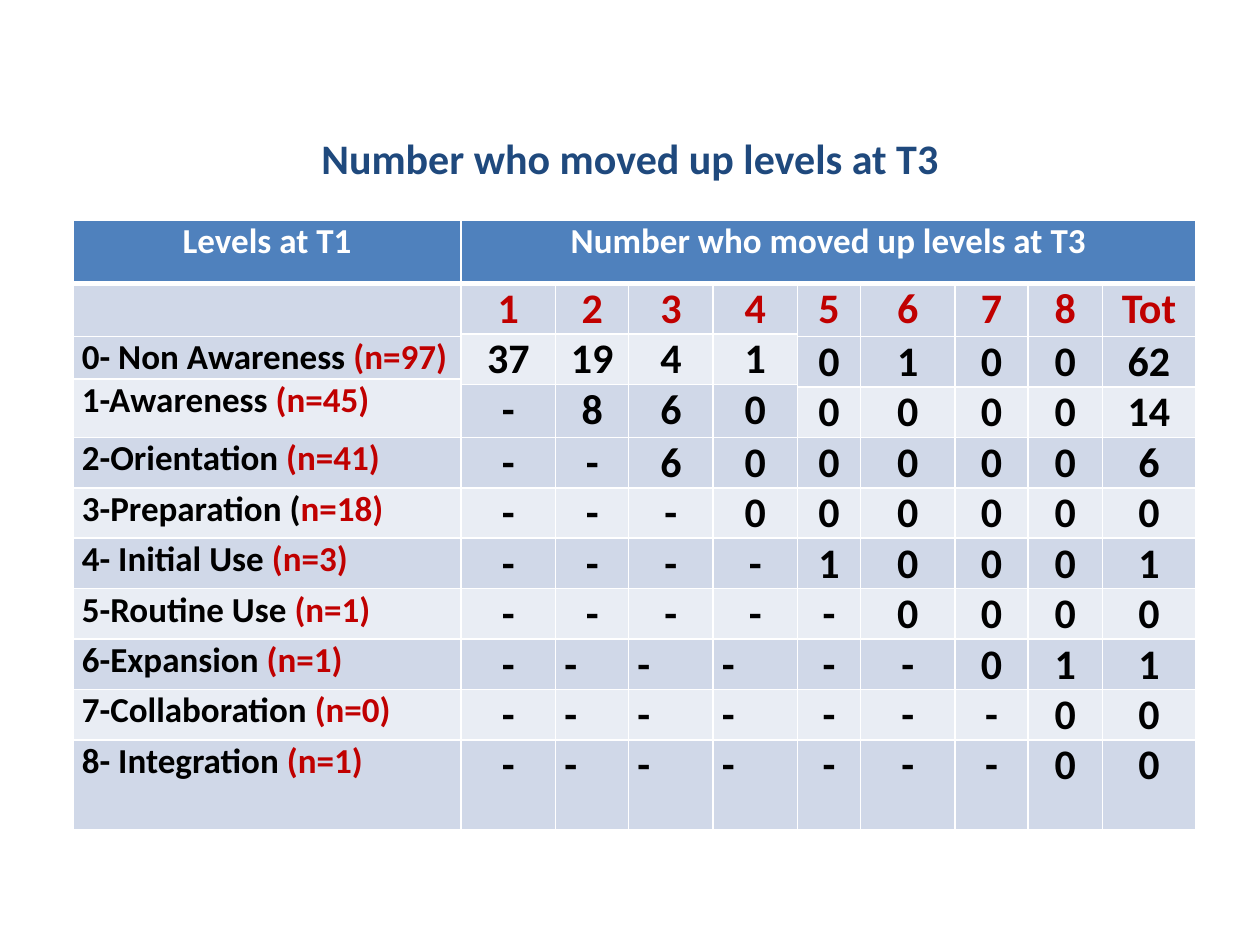
from dataclasses import dataclass
from typing import NamedTuple

from lxml.etree import SubElement
from pptx import Presentation
from pptx.dml.color import RGBColor
from pptx.enum.text import MSO_ANCHOR, MSO_AUTO_SIZE, PP_ALIGN
from pptx.oxml.ns import qn
from pptx.util import Inches, Pt


@dataclass(frozen=True)
class Theme:
    font: str = "Calibri"
    title: str = "1F497D"
    header: str = "4F81BD"
    bands: tuple[str, str] = ("E9EDF4", "D0D8E8")
    white: str = "FFFFFF"
    black: str = "000000"
    accent: str = "C00000"
    large: int = 24
    small: int = 20
    thin: int = 1
    thick: int = 3


class Span(NamedTuple):
    text: str
    color: str
    size: int


class Extent(NamedTuple):
    row: int
    rows: int = 1


class Placement(NamedTuple):
    label: Extent
    lower: Extent
    upper: Extent


class Level(NamedTuple):
    name: str
    sample: str
    counts: str
    left_columns: tuple[int, ...] = ()


THEME = Theme()
TITLE = "Number who moved up levels at T3"
COLUMN_WIDTHS = (3.08, 0.75, 0.58, 0.67, 0.67, 0.5, 0.75, 0.58, 0.59, 0.74)
ROW_HEIGHTS = (0.5, 0.4, 0.02, 0.34, 0.04, 0.02, *[0.4] * 7, 0.71)
FIRST_UPPER_COLUMN = 5
LEFT_ALIGNED = (2, 3, 4)
LEVELS = (
    Level("", "", "1 2 3 4 5 6 7 8 Tot"),
    Level("0- Non Awareness ", "(n=97)", "37 19 4 1 0 1 0 0 62"),
    Level("1-Awareness ", "(n=45)", "- 8 6 0 0 0 0 0 14"),
    Level("2-Orientation ", "(n=41)", "- - 6 0 0 0 0 0 6"),
    Level("3-Preparation (", "n=18)", "- - - 0 0 0 0 0 0"),
    Level("4- Initial Use ", "(n=3)", "- - - - 1 0 0 0 1"),
    Level("5-Routine Use ", "(n=1)", "- - - - - 0 0 0 0"),
    Level("6-Expansion ", "(n=1)", "- - - - - - 0 1 1", LEFT_ALIGNED),
    Level("7-Collaboration ", "(n=0)", "- - - - - - - 0 0", LEFT_ALIGNED),
    Level("8- Integration ", "(n=1)", "- - - - - - - 0 0", LEFT_ALIGNED),
)
STAGGERED = (
    Placement(Extent(1, 2), Extent(1), Extent(1, 2)),
    Placement(Extent(3), Extent(2, 3), Extent(3, 3)),
    Placement(Extent(4, 3), Extent(5, 2), Extent(6)),
)


def place_level(index: int) -> Placement:
    """Return the grid rows that a level's cells occupy."""
    if index < len(STAGGERED):
        return STAGGERED[index]
    return Placement(*[Extent(index + 4)] * 3)


def format_run(run, color: str, size: int) -> None:
    """Apply the shared bold face with a colour and size."""
    run.font.name = THEME.font
    run.font.bold = True
    run.font.size = Pt(size)
    run.font.color.rgb = RGBColor.from_string(color)


def draw_borders(cell, top: int, bottom: int) -> None:
    """Give a cell white borders with its own top and bottom weights."""
    properties = cell._tc.get_or_add_tcPr()
    weights = {"L": THEME.thin, "R": THEME.thin, "T": top, "B": bottom}
    for side, weight in weights.items():
        line = SubElement(properties, qn(f"a:ln{side}"), w=str(Pt(weight)))
        fill = SubElement(line, qn("a:solidFill"))
        SubElement(fill, qn("a:srgbClr"), val=THEME.white)


def draw_cell(table, extent: Extent, column: int, spans: list[Span],
              align: PP_ALIGN, columns: int = 1) -> None:
    """Merge, border, fill and write one table cell."""
    cell = table.cell(extent.row, column)
    if extent.rows > 1 or columns > 1:
        cell.merge(table.cell(extent.row + extent.rows - 1, column + columns - 1))
    is_header = extent.row == 0
    draw_borders(cell,
                 THEME.thick if extent.row == 1 else THEME.thin,
                 THEME.thick if is_header else THEME.thin)
    cell.fill.solid()
    color = THEME.header if is_header else THEME.bands[extent.row % 2]
    cell.fill.fore_color.rgb = RGBColor.from_string(color)
    cell.margin_left = cell.margin_right = Inches(0.07)
    cell.margin_top = cell.margin_bottom = 0
    para = cell.text_frame.paragraphs[0]
    para.alignment = align
    for span in spans:
        run = para.add_run()
        run.text = span.text
        format_run(run, span.color, span.size)


def draw_level(table, index: int, level: Level) -> None:
    """Draw the label and counts of one level."""
    place = place_level(index)
    label = [Span(level.name, THEME.black, THEME.small),
             Span(level.sample, THEME.accent, THEME.small)] if level.name else []
    draw_cell(table, place.label, 0, label, PP_ALIGN.LEFT)
    color = THEME.black if level.name else THEME.accent
    for column, count in enumerate(level.counts.split(), start=1):
        extent = place.lower if column < FIRST_UPPER_COLUMN else place.upper
        align = PP_ALIGN.LEFT if column in level.left_columns else PP_ALIGN.CENTER
        draw_cell(table, extent, column, [Span(count, color, THEME.large)], align)


def draw_title(page) -> None:
    """Place and format the slide title."""
    box = page.shapes.title
    box.left, box.top, box.width, box.height = map(Inches, (2.43, 1, 5.14, 0.5))
    frame = box.text_frame
    frame.text = TITLE
    frame.word_wrap = False
    frame.auto_size = MSO_AUTO_SIZE.SHAPE_TO_FIT_TEXT
    frame.vertical_anchor = MSO_ANCHOR.MIDDLE
    para = frame.paragraphs[0]
    para.alignment = PP_ALIGN.CENTER
    format_run(para.runs[0], THEME.title, THEME.large)


def draw_table(page) -> None:
    """Draw the table of moves between levels."""
    table = page.shapes.add_table(
        len(ROW_HEIGHTS), len(COLUMN_WIDTHS), Inches(0.58), Inches(1.75),
        Inches(sum(COLUMN_WIDTHS)), Inches(sum(ROW_HEIGHTS))).table
    table.first_row = table.horz_banding = False
    for column, width in zip(table.columns, COLUMN_WIDTHS):
        column.width = Inches(width)
    for row, height in zip(table.rows, ROW_HEIGHTS):
        row.height = Inches(height)
    for column, text, columns in ((0, "Levels at T1", 1), (1, TITLE, 9)):
        draw_cell(table, Extent(0), column, [Span(text, THEME.white, THEME.small)],
                  PP_ALIGN.CENTER, columns)
    for index, level in enumerate(LEVELS):
        draw_level(table, index, level)


def main() -> None:
    """Build and save the slide."""
    deck = Presentation()
    deck.slide_width, deck.slide_height = Inches(10), Inches(7.5)
    page = deck.slides.add_slide(deck.slide_layouts[5])
    draw_title(page)
    draw_table(page)
    deck.save("out.pptx")


if __name__ == "__main__":
    main()
